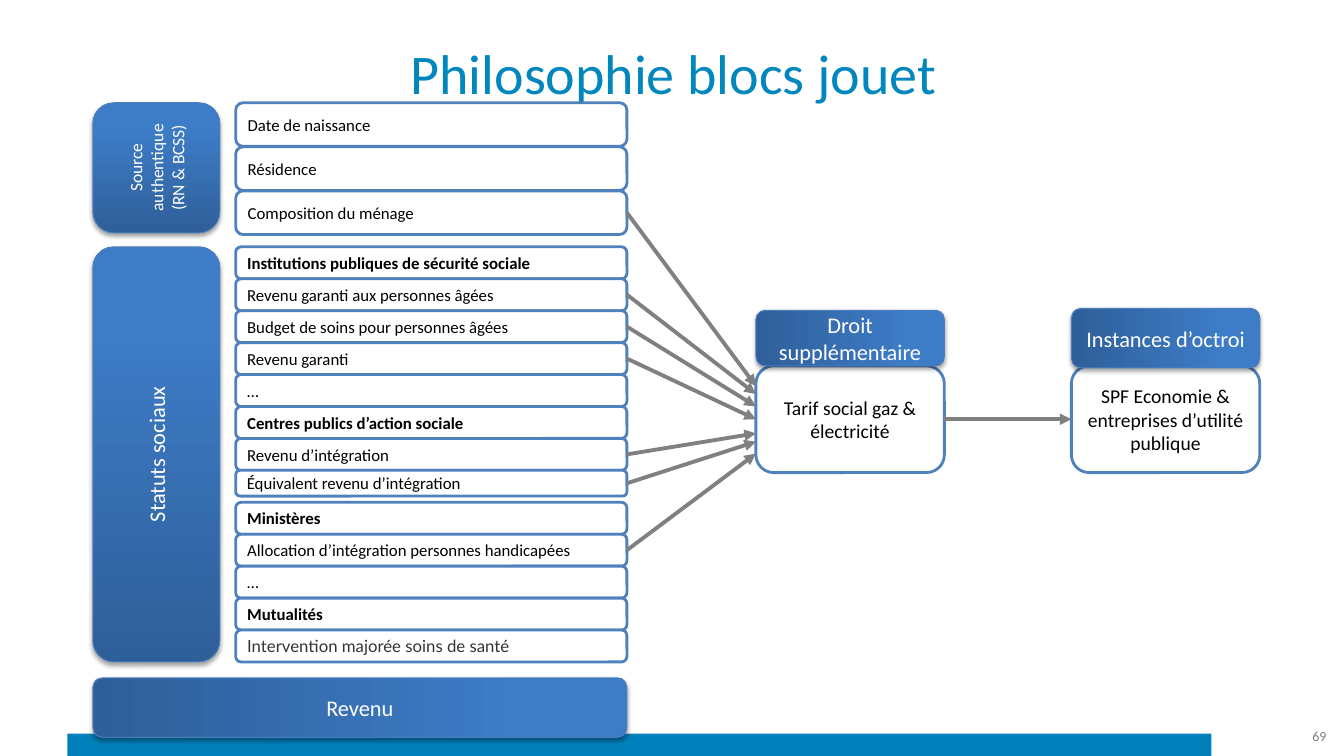
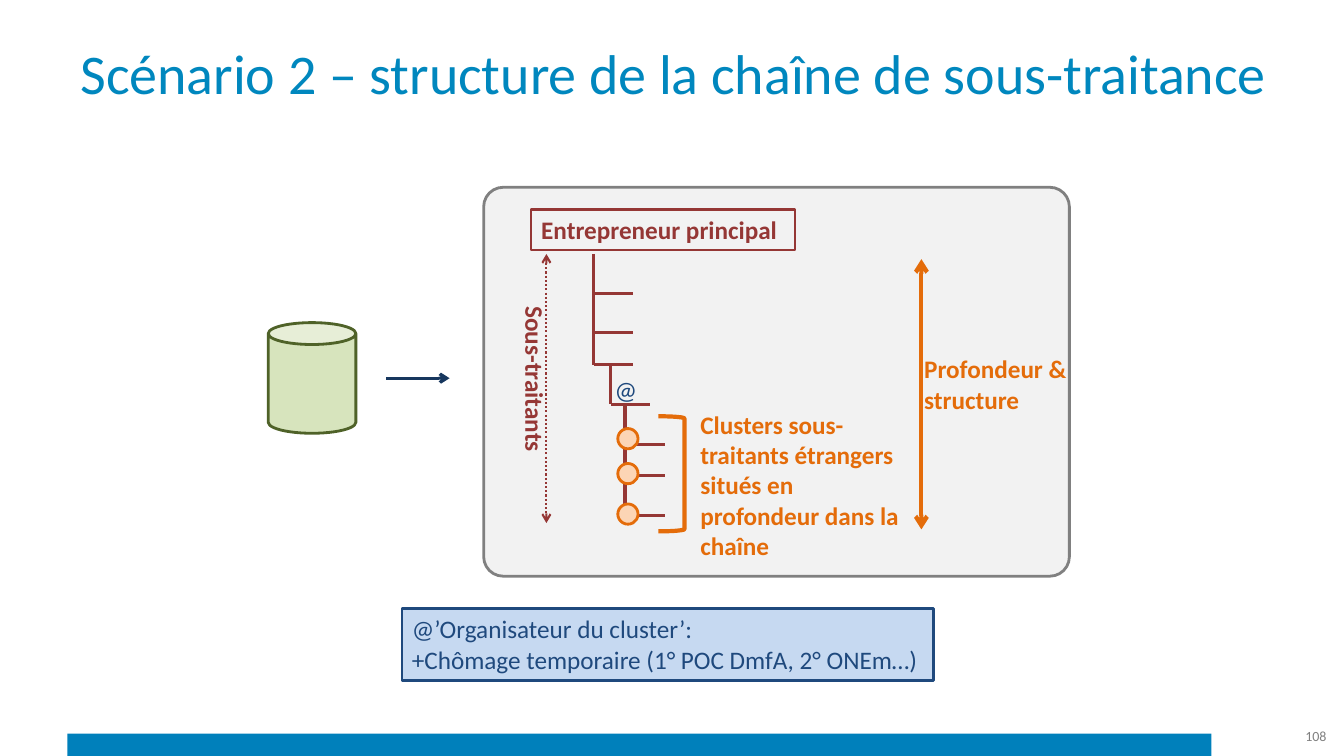
from dataclasses import dataclass

from lxml import etree
from pptx import Presentation
from pptx.dml.color import RGBColor
from pptx.enum.dml import MSO_LINE
from pptx.enum.shapes import MSO_CONNECTOR, MSO_SHAPE
from pptx.enum.text import MSO_ANCHOR, MSO_AUTO_SIZE, PP_ALIGN
from pptx.oxml.ns import qn
from pptx.util import Cm, Pt

STRAIGHT = MSO_CONNECTOR.STRAIGHT
RECTANGLE = MSO_SHAPE.RECTANGLE
ROUNDED = MSO_SHAPE.ROUNDED_RECTANGLE
ELLIPSE = MSO_SHAPE.OVAL
CAN = MSO_SHAPE.CAN
BRACKET = MSO_SHAPE.RIGHT_BRACKET
DOTTED = MSO_LINE.ROUND_DOT
MIDDLE, TOP = MSO_ANCHOR.MIDDLE, MSO_ANCHOR.TOP
LEFT, CENTER, RIGHT = PP_ALIGN.LEFT, PP_ALIGN.CENTER, PP_ALIGN.RIGHT
FIT_TEXT = MSO_AUTO_SIZE.SHAPE_TO_FIT_TEXT
SIDE_LEFT, SIDE_RIGHT = 1, 3


@dataclass(frozen=True)
class Theme:
    """Colours, fonts and type sizes of the deck."""

    font: str = "Calibri"
    accent_font: str = "Lato"
    title: str = "0087BE"
    band: str = "0080BB"
    white: str = "FFFFFF"
    black: str = "000000"
    charcoal: str = "333333"
    grey: str = "808080"
    panel: str = "F2F2F2"
    block_line: str = "4F81BD"
    header_line: str = "4B7EBC"
    header_dark: str = "2F5F99"
    header_light: str = "3D7CC7"
    red: str = "953735"
    orange: str = "E46C0A"
    peach: str = "FCD5B5"
    green: str = "4F6228"
    pale_green: str = "D7E4BD"
    navy: str = "17375E"
    blue: str = "1F497D"
    pale_blue: str = "C6D9F1"
    title_size: float = 40
    large: float = 18
    header_size: float = 16
    body: float = 14
    source_size: float = 12.5
    row: float = 12
    number: float = 10


THEME = Theme()


class Deck:
    """Presentation with its style and the slide being drawn."""

    def __init__(self, theme):
        """Open an empty widescreen presentation."""
        self.theme = theme
        self.presentation = Presentation()
        self.presentation.slide_width = Cm(33.87)
        self.presentation.slide_height = Cm(19.05)
        self.slide = None

    def new_slide(self, title, number):
        """Start a slide with its title, footer band and number."""
        theme = self.theme
        layout = self.presentation.slide_layouts[5]
        self.slide = self.presentation.slides.add_slide(layout)
        shape = self.slide.shapes.title
        shape.left, shape.top = Cm(1.73), Cm(0.53)
        shape.width, shape.height = Cm(30.48), Cm(2.57)
        self.set_text(shape, title, theme.title_size, theme.title, CENTER)
        self.shape(RECTANGLE, (1.7, 18.49, 28.83, 0.56), theme.band)
        self.label(number, (30.91, 18.03, 2.77, 1.02), theme.number, theme.grey,
                   alignment=RIGHT, anchor=MIDDLE, wrap=True)

    def set_text(self, shape, text, size, color, alignment=LEFT, bold=False,
                 anchor=MIDDLE, wrap=True, font=None):
        """Put formatted text into a shape."""
        frame = shape.text_frame
        frame.text = text
        frame.word_wrap = wrap
        frame.vertical_anchor = anchor
        if not wrap:
            frame.auto_size = FIT_TEXT
        for paragraph in frame.paragraphs:
            paragraph.alignment = alignment
            paragraph.font.name = font or self.theme.font
            paragraph.font.size = Pt(size)
            paragraph.font.bold = bold
            paragraph.font.color.rgb = RGBColor.from_string(color)

    def shape(self, kind, place, fill=None, line=None, width=2):
        """Add a preset shape with plain fill and outline."""
        shape = self.slide.shapes.add_shape(kind, *map(Cm, place))
        shape.shadow.inherit = False
        if fill:
            shape.fill.solid()
            shape.fill.fore_color.rgb = RGBColor.from_string(fill)
        else:
            shape.fill.background()
        if line:
            shape.line.color.rgb = RGBColor.from_string(line)
            shape.line.width = Pt(width)
        else:
            shape.line.fill.background()
        return shape

    def block(self, text, place, size, **style):
        """Add a white rounded block with a blue outline."""
        shape = self.shape(ROUNDED, place, self.theme.white, self.theme.block_line)
        self.set_text(shape, text, size, **{"color": self.theme.black, **style})
        return shape

    def header(self, text, place, size=None, upright=False):
        """Add a shaded blue header, its text optionally turned upwards."""
        theme = self.theme
        shape = self.shape(ROUNDED, place, line=theme.header_line, width=0.75)
        shape.fill.gradient()
        shape.fill.gradient_angle = 90 if upright else 0
        dark, light = shape.fill.gradient_stops
        dark.color.rgb = RGBColor.from_string(theme.header_dark)
        light.color.rgb = RGBColor.from_string(theme.header_light)
        dark.position, light.position = 0, 0.8
        effects = shape._element.spPr.find(qn("a:effectLst"))
        shadow = etree.SubElement(effects, qn("a:outerShdw"), blurRad="39370",
                                  dist="22860", dir="5400000", rotWithShape="0")
        tint = etree.SubElement(shadow, qn("a:srgbClr"), val=theme.black)
        etree.SubElement(tint, qn("a:alpha"), val="35000")
        self.set_text(shape, text, size or theme.header_size, theme.white, CENTER)
        if upright:
            shape.text_frame._txBody.bodyPr.set("vert", "vert270")

    def label(self, text, place, size, color, alignment=LEFT, bold=False,
              anchor=TOP, wrap=False):
        """Add a text box."""
        shape = self.slide.shapes.add_textbox(*map(Cm, place))
        self.set_text(shape, text, size, color, alignment, bold, anchor, wrap)
        return shape

    def line(self, start, end, color, width, head=None, tail=None, dash=None):
        """Add a straight line with optional arrowheads."""
        connector = self.slide.shapes.add_connector(STRAIGHT, *map(Cm, start + end))
        connector.line.color.rgb = RGBColor.from_string(color)
        connector.line.width = Pt(width)
        if dash:
            connector.line.dash_style = dash
        properties = connector._element.spPr
        outline = properties.get_or_add_ln()
        for tag, kind in (("a:headEnd", head), ("a:tailEnd", tail)):
            if kind:
                etree.SubElement(outline, qn(tag), type=kind)
        etree.SubElement(properties, qn("a:effectLst"))
        return connector

    def flow(self, source, end, target=None):
        """Draw a grey arrow from a block to a point or to another block."""
        connector = self.line((0, 0), end, self.theme.grey, 2.75, tail="triangle")
        connector.begin_connect(source, SIDE_RIGHT)
        if target:
            connector.end_connect(target, SIDE_LEFT)


def draw_building_blocks(deck):
    """Draw the slide linking data blocks to a derived right."""
    theme = deck.theme
    deck.new_slide("Philosophie blocs jouet", "69")
    header_left, header_width = 2.34, 3.2
    row_left, row_width = 5.94, 9.86

    source_top, source_pitch = 2.59, 1.11
    deck.header("Source authentique (RN & BCSS)",
                (header_left, source_top, header_width, 3.28),
                theme.source_size, upright=True)
    sources = ("Date de naissance", "Résidence", "Composition du ménage")
    source_blocks = [
        deck.block(text, (row_left, source_top + index * source_pitch,
                          row_width, 1.1), theme.row)
        for index, text in enumerate(sources)
    ]

    status_top, status_height = 6.22, 10.46
    deck.header("Statuts sociaux",
                (header_left, status_top, header_width, status_height), upright=True)
    bold = {"bold": True}
    short_height = 0.65
    statuses = (
        ("Institutions publiques de sécurité sociale", bold),
        ("Revenu garanti aux personnes âgées", {}),
        ("Budget de soins pour personnes âgées", {}),
        ("Revenu garanti", {}),
        ("…", {}),
        ("Centres publics d’action sociale", bold),
        ("Revenu d’intégration", {}),
        ("Équivalent revenu d’intégration", {}),
        ("Ministères", bold),
        ("Allocation d’intégration personnes handicapées", {}),
        ("…", {}),
        ("Mutualités", bold),
        ("Intervention majorée soins de santé",
         {"color": theme.charcoal, "font": theme.accent_font}),
    )
    pitch = status_height / len(statuses)
    status_blocks = []
    for index, (text, style) in enumerate(statuses):
        height = short_height if text.startswith("Équivalent") else pitch
        place = (row_left, status_top + index * pitch, row_width, height)
        status_blocks.append(deck.block(text, place, theme.row, **style))
    deck.header("Revenu", (header_left, 17.08, 13.46, 1.5))

    outcomes = (
        (19.05, "Tarif social gaz & électricité", "Droit supplémentaire", 7.82, 1.4),
        (27, "SPF Economie & entreprises d’utilité publique", "Instances d’octroi",
         7.77, 1.5),
    )
    outcome_blocks = []
    for left, text, heading, top, height in outcomes:
        outcome_blocks.append(deck.block(text, (left, 9.22, 4.75, 2.69),
                                         theme.body, alignment=CENTER))
        deck.header(heading, (left, top, 4.75, height))
    tariff, authority = outcome_blocks

    arrivals = (
        (source_blocks[2], 9.73),
        (status_blocks[1], 9.93),
        (status_blocks[2], 10.24),
        (status_blocks[6], 10.92),
        (status_blocks[7], 11.13),
        (status_blocks[9], 11.43),
    )
    for block, arrival in arrivals:
        deck.flow(block, (19.05, arrival))
    deck.flow(status_blocks[3], (19.05, 10.57), tariff)
    deck.flow(tariff, (27, 10.57), authority)


def draw_subcontracting_chain(deck):
    """Draw the slide showing the depth of a subcontracting chain."""
    theme = deck.theme
    deck.new_slide("Scénario 2 – structure de la chaîne de sous-traitance", "108")
    panel = deck.shape(ROUNDED, (12.19, 4.72, 14.76, 9.8), theme.panel, theme.grey)
    panel.adjustments[0] = 0.05

    twig = 1
    trunks = (
        (14.96, 6.4, (7.39, 8.38, 9.19)),
        (15.39, 9.19, (10.19,)),
        (15.75, 10.19, (11.2, 11.99, 12.98)),
    )
    for trunk, top, branches in trunks:
        for branch in branches:
            deck.line((trunk, top), (trunk, branch), theme.red, 2.25)
            deck.line((trunk, branch), (trunk + twig, branch), theme.red, 2.25)
            top = branch

    deck.shape(BRACKET, (16.59, 10.49, 0.66, 2.9), line=theme.orange, width=3)
    for top in (10.8, 11.68, 12.7):
        deck.shape(ELLIPSE, (15.57, top, 0.51, 0.51), theme.peach, theme.orange)
    deck.label("Clusters sous-traitants étrangers situés en profondeur dans la chaîne",
               (17.4, 10.19, 5.94, 4.11), theme.large, theme.orange,
               bold=True, wrap=True)

    deck.shape(CAN, (6.76, 8.13, 2.21, 2.79), theme.pale_green, theme.green)
    deck.line((9.73, 9.53), (11.33, 9.53), theme.navy, 2.25, tail="arrow")

    contractor = deck.shape(RECTANGLE, (13.39, 5.28, 6.65, 1.02),
                            line=theme.red, width=1.5)
    deck.set_text(contractor, "Entrepreneur principal", theme.large, theme.red,
                  bold=True, anchor=TOP, wrap=False)
    deck.line((13.77, 6.4), (13.77, 13.18), theme.red, 1.5,
              head="arrow", tail="arrow", dash=DOTTED)
    subcontractors = deck.label("Sous-traitants", (11.38, 9.07, 4.22, 1.02),
                                theme.large, theme.red, bold=True)
    subcontractors.rotation = 90

    deck.line((23.22, 6.53), (23.22, 13.34), theme.orange, 3,
              head="arrow", tail="arrow")
    deck.label("Profondeur &\nstructure", (23.04, 8.79, 4.27, 1.8),
               theme.large, theme.orange, bold=True)

    organiser = deck.shape(RECTANGLE, (10.13, 15.34, 13.39, 1.8),
                           theme.pale_blue, theme.blue)
    deck.set_text(organiser, "@’Organisateur du cluster’:\n"
                  "+Chômage temporaire (1° POC DmfA, 2° ONEm…)",
                  theme.large, theme.blue, anchor=TOP, wrap=False)
    deck.label("@", (15.24, 9.3, 1.09, 1.02), theme.large, theme.blue)


def main():
    """Build and save the presentation."""
    deck = Deck(THEME)
    draw_building_blocks(deck)
    draw_subcontracting_chain(deck)
    deck.presentation.save("out.pptx")


if __name__ == "__main__":
    main()
